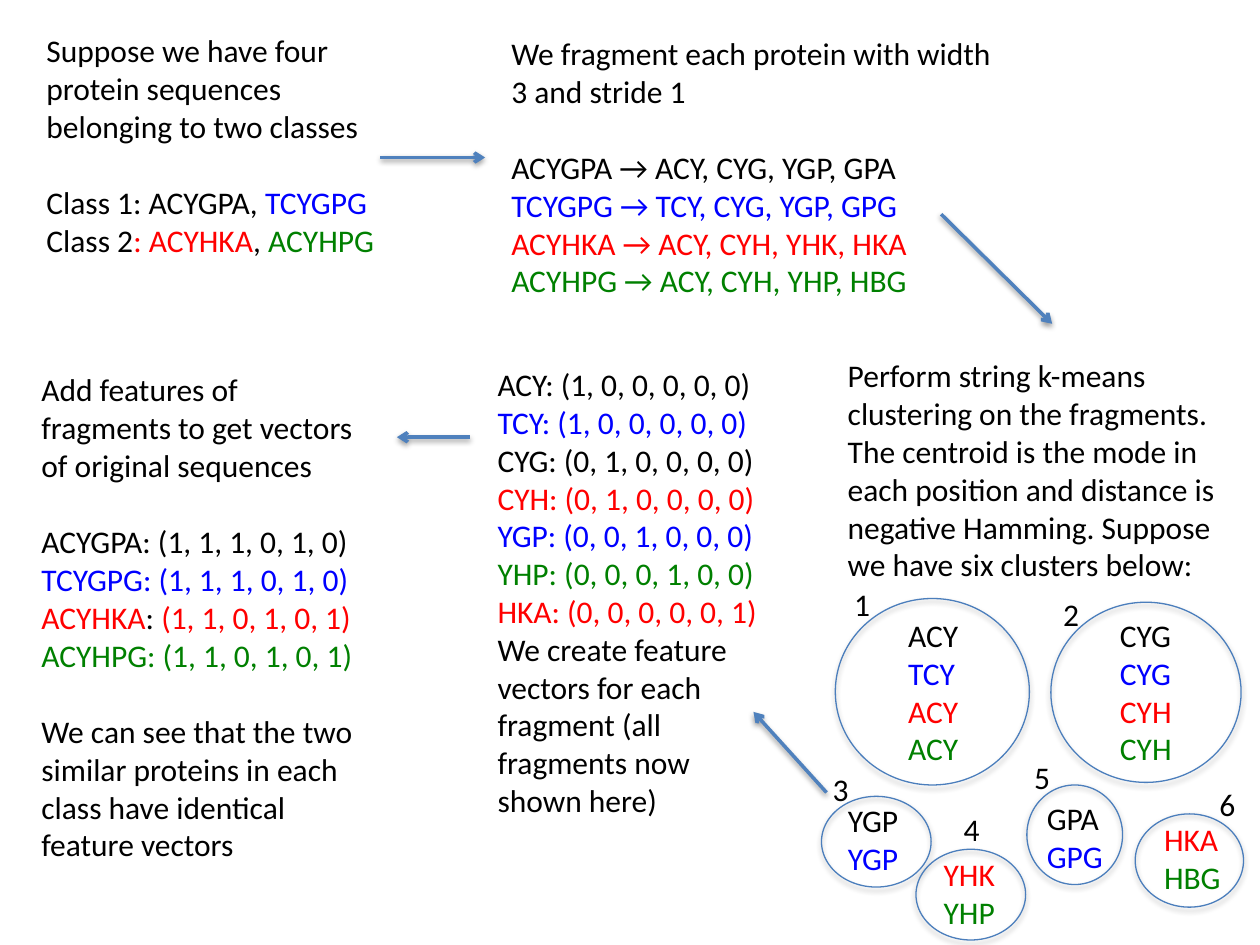
"""Build a slide on turning protein sequences into feature vectors."""
from lxml import etree
from pptx import Presentation
from pptx.dml.color import RGBColor
from pptx.enum.shapes import MSO_CONNECTOR, MSO_SHAPE
from pptx.enum.text import MSO_AUTO_SIZE
from pptx.oxml.ns import qn
from pptx.util import Inches, Pt

LINE = MSO_CONNECTOR.STRAIGHT
OVAL = MSO_SHAPE.OVAL
FIT = MSO_AUTO_SIZE.SHAPE_TO_FIT_TEXT

INK = {"black": "000000", "blue": "0000FF", "red": "FF0000",
       "green": "008000", "arrow": "4F81BD", "ring": "4B7EBC"}
FONT = {"name": "Calibri", "size": Pt(18)}
GAP = Pt(22)
K, B, R, G = "black", "blue", "red", "green"

# Each block: box, wrap, then groups of lines; a line is a list of (ink, text).
BLOCKS = [
    ((0.27, 0.2, 2.89, 1.92), True, [
        [[(K, "Suppose we have four protein sequences belonging to two classes")]],
        [[(K, "Class 1: ACYGPA, "), (B, "TCYGPG")],
         [(K, "Class 2"), (R, ": ACYHKA"), (K, ", "), (G, "ACYHPG")]],
    ]),
    ((3.96, 0.22, 4.07, 2.22), False, [
        [[(K, "We fragment each protein with width")],
         [(K, "3 and stride 1")]],
        [[(K, "ACYGPA → ACY, CYG, YGP, GPA")],
         [(B, "TCYGPG → TCY, CYG, YGP, GPG")],
         [(R, "ACYHKA → ACY, CYH, YHK, HKA")],
         [(G, "ACYHPG → ACY, CYH, YHP, HBG")]],
    ]),
    ((6.63, 2.78, 3.37, 1.92), True, [
        [[(K, "Perform string k-means clustering on the fragments. "
              "The centroid is the mode in each position and distance is "
              "negative Hamming. Suppose we have six clusters below:")]],
    ]),
    ((3.85, 2.85, 2.42, 3.74), True, [
        [[(K, "ACY: (1, 0, 0, 0, 0, 0)")],
         [(B, "TCY: (1, 0, 0, 0, 0, 0)")],
         [(K, "CYG: (0, 1, 0, 0, 0, 0)")],
         [(R, "CYH: (0, 1, 0, 0, 0, 0)")],
         [(B, "YGP: (0, 0, 1, 0, 0, 0)")],
         [(G, "YHP: (0, 0, 0, 1, 0, 0)")],
         [(R, "HKA: (0, 0, 0, 0, 0, 1)")],
         [(K, "We create feature vectors for each")],
         [(K, "fragment (all fragments now shown here)")]],
    ]),
    ((0.23, 2.89, 2.72, 4.04), True, [
        [[(K, "Add features of fragments to get vectors of original sequences")]],
        [[(K, "ACYGPA: (1, 1, 1, 0, 1, 0)")],
         [(B, "TCYGPG: (1, 1, 1, 0, 1, 0)")],
         [(R, "ACYHKA"), (K, ": "), (R, "(1, 1, 0, 1, 0, 1)")],
         [(G, "ACYHPG: (1, 1, 0, 1, 0, 1)")]],
        [[(K, "We can see that the two similar proteins in each class "
              "have identical feature vectors")]],
    ]),
]

# Each cluster: ring box, number corner, list box, members.
CLUSTERS = [
    ((6.63, 4.75, 1.54, 1.48), (6.68, 4.59), (7.11, 4.84, 0.61, 1.31),
     [(K, "ACY"), (B, "TCY"), (R, "ACY"), (G, "ACY")]),
    ((8.34, 4.78, 1.51, 1.43), (8.34, 4.67), (8.79, 4.84, 0.62, 1.31),
     [(K, "CYG"), (B, "CYG"), (R, "CYH"), (G, "CYH")]),
    ((6.52, 6.32, 0.87, 0.72), (6.51, 6.06), (6.63, 6.31, 0.61, 0.71),
     [(K, "YGP"), (B, "YGP")]),
    ((7.27, 6.74, 0.87, 0.72), (7.55, 6.38), (7.39, 6.74, 0.61, 0.71),
     [(R, "YHK"), (G, "YHP")]),
    ((8.15, 6.23, 0.76, 0.79), (8.11, 5.97), (8.21, 6.29, 0.65, 0.71),
     [(K, "GPA"), (B, "GPG")]),
    ((9.01, 6.46, 0.86, 0.74), (9.58, 6.18), (9.14, 6.46, 0.66, 0.71),
     [(R, "HKA"), (G, "HBG")]),
]

ARROWS = [
    (3.02, 1.25, 3.85, 1.25),
    (7.47, 1.7, 8.35, 2.57),
    (6.56, 6.29, 5.98, 5.65),
    (3.73, 3.47, 3.15, 3.47),
]


def tint(name):
    return RGBColor.from_string(INK[name])


def span(nums):
    return [Inches(n) for n in nums]


def stroke(line, name, width):
    line.color.rgb = tint(name)
    line.width = Pt(width)


def add_text(slide, box, wrap, groups):
    frame = slide.shapes.add_textbox(*span(box)).text_frame
    frame.word_wrap = wrap
    frame.auto_size = FIT
    lines = [(line, i > 0 and j == 0)
             for i, group in enumerate(groups) for j, line in enumerate(group)]
    for n, (line, gap) in enumerate(lines):
        para = frame.add_paragraph() if n else frame.paragraphs[0]
        if gap:
            para.space_before = GAP
        for ink, text in line:
            run = para.add_run()
            run.text = text
            run.font.color.rgb = tint(ink)
            for key, value in FONT.items():
                setattr(run.font, key, value)


def add_ring(slide, box):
    ring = slide.shapes.add_shape(OVAL, *span(box))
    ring.fill.background()
    stroke(ring.line, "ring", 0.75)


def add_arrow(slide, ends):
    arrow = slide.shapes.add_connector(LINE, *span(ends))
    stroke(arrow.line, "arrow", 2)
    etree.SubElement(arrow.line._get_or_add_ln(), qn("a:tailEnd"), type="arrow")


def main():
    deck = Presentation()
    deck.slide_width, deck.slide_height = span((10, 7.5))
    slide = deck.slides.add_slide(deck.slide_layouts[6])
    for ends in ARROWS:
        add_arrow(slide, ends)
    for ring, *_ in CLUSTERS:
        add_ring(slide, ring)
    for block in BLOCKS:
        add_text(slide, *block)
    for num, (_, spot, box, names) in enumerate(CLUSTERS, 1):
        add_text(slide, box, False, [[[name] for name in names]])
        add_text(slide, (*spot, 0.33, 0.4), False, [[[(K, str(num))]]])
    deck.save("out.pptx")


if __name__ == "__main__":
    main()
